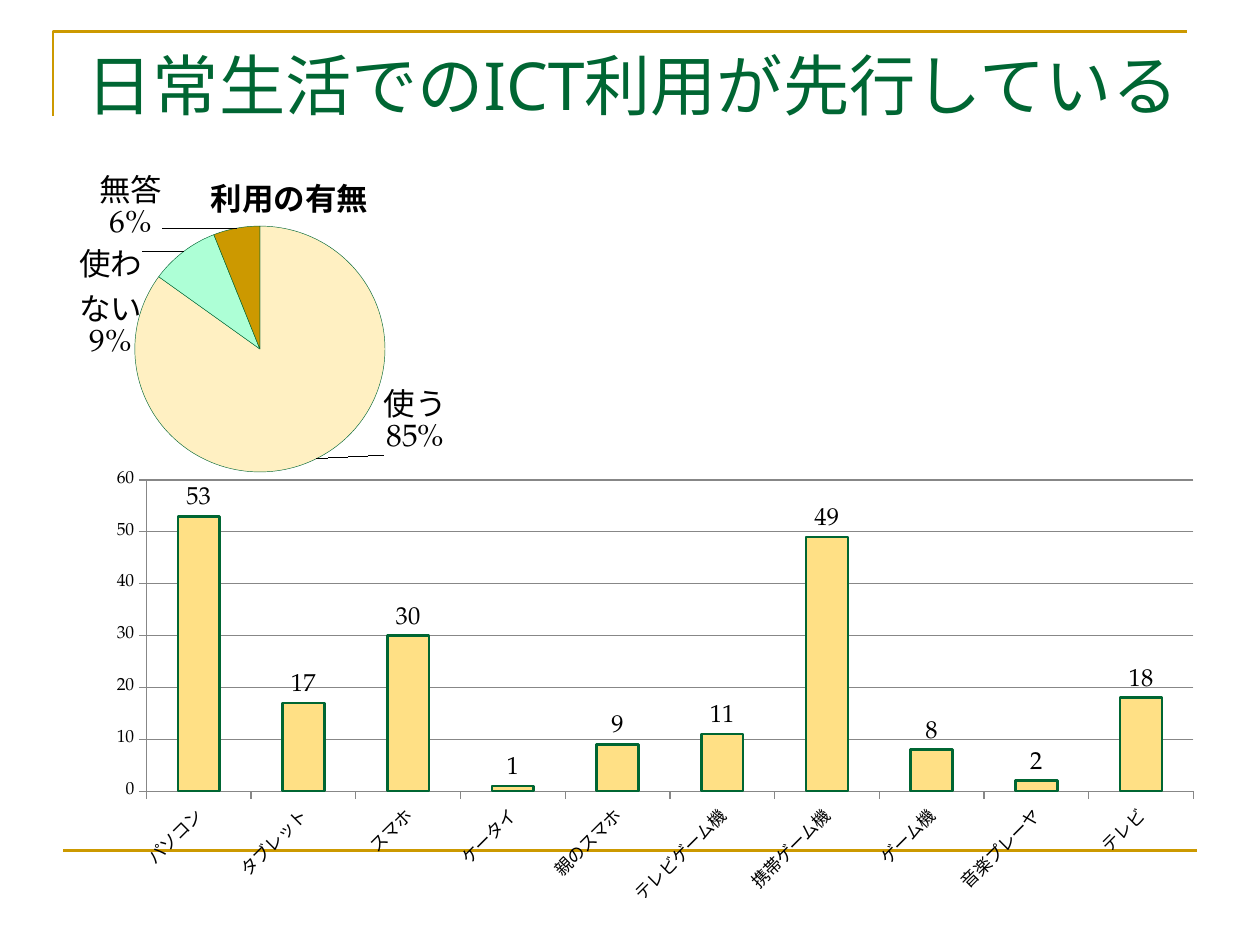
from dataclasses import dataclass

from lxml.etree import SubElement
from pptx import Presentation
from pptx.chart.data import CategoryChartData
from pptx.dml.color import RGBColor
from pptx.enum.chart import XL_CHART_TYPE, XL_LABEL_POSITION, XL_TICK_MARK
from pptx.enum.text import MSO_ANCHOR
from pptx.oxml import parse_xml
from pptx.oxml.ns import nsdecls, qn
from pptx.util import Inches, Pt


@dataclass(frozen=True)
class Theme:
    """Colours, fonts and type sizes of the slide."""
    green: RGBColor = RGBColor.from_string("006633")
    gold: RGBColor = RGBColor.from_string("CC9900")
    cream: RGBColor = RGBColor.from_string("FFF0C2")
    mint: RGBColor = RGBColor.from_string("ADFFD6")
    amber: RGBColor = RGBColor.from_string("FFE085")
    grey: RGBColor = RGBColor.from_string("878787")
    black: RGBColor = RGBColor.from_string("000000")
    title_font: str = "Noto Sans"
    chart_font: str = "TeX Gyre Pagella"
    title: float = 37.8
    heading: float = 18
    value: float = 14
    axis: float = 10


THEME = Theme()


def style_font(font, size, color=THEME.black, name=THEME.chart_font, bold=False):
    """Format a font."""
    font.size, font.name, font.bold = Pt(size), name, bold
    font.color.rgb = color


def style_line(line, color, width):
    """Format an outline."""
    line.color.rgb = color
    line.width = Pt(width)


def add_text(s, text, box, **fmt):
    """Add a one-line text box."""
    tf = s.shapes.add_textbox(*map(Inches, box)).text_frame
    tf.word_wrap = False
    tf.vertical_anchor = MSO_ANCHOR.TOP
    r = tf.paragraphs[0].add_run()
    r.text = text
    style_font(r.font, **fmt)


def add_frame(s, left, top, width, height):
    """Draw the corner rule above the title."""
    fb = s.shapes.build_freeform(Inches(left), Inches(top + height))
    fb.add_line_segments([(Inches(left), Inches(top)),
                          (Inches(left + width), Inches(top))], close=False)
    sp = fb.convert_to_shape()
    sp.shadow.inherit = False
    sp.fill.background()
    style_line(sp.line, THEME.gold, 1.5)


def add_rule(s, left, top, width):
    """Draw the horizontal rule at the foot."""
    y = Inches(top)
    line = s.shapes.add_connector(1, Inches(left), y, Inches(left + width), y)
    style_line(line.line, THEME.gold, 1.5)
    SubElement(line._element.spPr, qn("a:effectLst"))


def layout_xml(inner=False, edge=True, **parts):
    """Build a manual chart layout."""
    target = '<c:layoutTarget val="inner"/>' if inner else ""
    modes = '<c:xMode val="edge"/><c:yMode val="edge"/>' if edge else ""
    sizes = "".join(f'<c:{k} val="{v}"/>' for k, v in parts.items())
    return parse_xml(f'<c:layout {nsdecls("c")}><c:manualLayout>{target}{modes}'
                     f'{sizes}</c:manualLayout></c:layout>')


def set_layout(parent, layout, index):
    """Replace the layout of a chart part."""
    for old in parent.findall(qn("c:layout")):
        parent.remove(old)
    parent.insert(index, layout)


def add_chart(s, kind, box, name, cats, vals):
    """Add a one-series chart without a legend."""
    data = CategoryChartData()
    data.categories = cats
    data.add_series(name, vals)
    chart = s.shapes.add_chart(kind, *map(Inches, box), data).chart
    chart.has_legend = False
    style_font(chart.font, THEME.axis)
    return chart


def show_share(labels):
    """Show category and percentage in a set of pie labels."""
    labels.show_category_name = labels.show_percentage = True
    labels.show_value = False
    labels.position = XL_LABEL_POSITION.OUTSIDE_END
    style_font(labels.font, THEME.heading)


def move_label(point, dx, dy):
    """Shift the label of a slice by fractions of the chart size."""
    label = point.data_label
    style_font(label.font, THEME.heading)
    label.position = XL_LABEL_POSITION.OUTSIDE_END
    dlbl = label._get_or_add_dLbl()
    for tag, shown in (("showVal", 0), ("showCatName", 1), ("showPercent", 1)):
        dlbl.find(qn(f"c:{tag}")).set("val", str(shown))
    set_layout(dlbl, layout_xml(edge=False, x=dx, y=dy), 1)


def add_usage_pie(s, box):
    """Add the pie of users and non-users."""
    title = "利用の有無"
    chart = add_chart(s, XL_CHART_TYPE.PIE, box, title,
                      ["使う", "使わない", "無答"], [85, 9, 6])
    chart.has_title = True
    p = chart.chart_title.text_frame.paragraphs[0]
    r = p.add_run()
    r.text = title
    style_font(r.font, THEME.heading, bold=True)
    set_layout(chart.chart_title._element, layout_xml(x=0.45, y=0.08), 1)
    plot = chart.plots[0]
    plot.vary_by_categories = True
    set_layout(chart._chartSpace.chart.plotArea,
               layout_xml(inner=True, x=0.28, y=0.23, w=0.58, h=0.6), 0)
    series = plot.series[0]
    show_share(series.data_labels)
    slices = ((THEME.cream, 0.14, -0.21), (THEME.mint, -0.08, 0.28),
              (THEME.gold, -0.16, 0.05))
    for i, (color, dx, dy) in enumerate(slices):
        point = series.points[i]
        point.format.fill.solid()
        point.format.fill.fore_color.rgb = color
        style_line(point.format.line, THEME.green, 0.25)
        move_label(point, dx, dy)


def add_device_columns(s, box):
    """Add the column chart of devices in use."""
    cats = ["パソコン", "タブレット", "スマホ", "ケータイ", "親のスマホ",
            "テレビゲーム機", "携帯ゲーム機", "ゲーム機", "音楽プレーヤ", "テレビ"]
    chart = add_chart(s, XL_CHART_TYPE.COLUMN_CLUSTERED, box, "Series 1", cats,
                      [53, 17, 30, 1, 9, 11, 49, 8, 2, 18])
    chart.has_title = False
    plot = chart.plots[0]
    plot.vary_by_categories = False
    plot.gap_width = 150
    fmt = plot.series[0].format
    fmt.fill.solid()
    fmt.fill.fore_color.rgb = THEME.amber
    style_line(fmt.line, THEME.green, 1.5)
    plot.has_data_labels = True
    plot.data_labels.show_value = True
    plot.data_labels.position = XL_LABEL_POSITION.OUTSIDE_END
    style_font(plot.data_labels.font, THEME.value)
    for axis in (chart.category_axis, chart.value_axis):
        axis.major_tick_mark = XL_TICK_MARK.OUTSIDE
        style_line(axis.format.line, THEME.grey, 0.75)
        style_font(axis.tick_labels.font, THEME.axis)
    chart.category_axis._element.txPr.bodyPr.set("rot", "-2700000")
    axis = chart.value_axis
    axis.minimum_scale, axis.maximum_scale, axis.major_unit = 0, 60, 10
    style_line(axis.major_gridlines.format.line, THEME.grey, 0.75)


def main():
    """Build and save the slide."""
    prs = Presentation()
    prs.slide_width, prs.slide_height = Inches(10), Inches(7.5)
    s = prs.slides.add_slide(prs.slide_layouts[6])
    add_frame(s, 0.42, 0.25, 9, 0.67)
    add_rule(s, 0.5, 6.75, 9)
    add_text(s, "日常生活でのICT利用が先行している", (0.59, 0.3, 9.13, 1.25),
             size=THEME.title, color=THEME.green, name=THEME.title_font)
    add_usage_pie(s, (0, 0.99, 3.62, 3.31))
    add_device_columns(s, (0.75, 3.67, 8.9, 3.59))
    prs.save("out.pptx")


if __name__ == "__main__":
    main()
